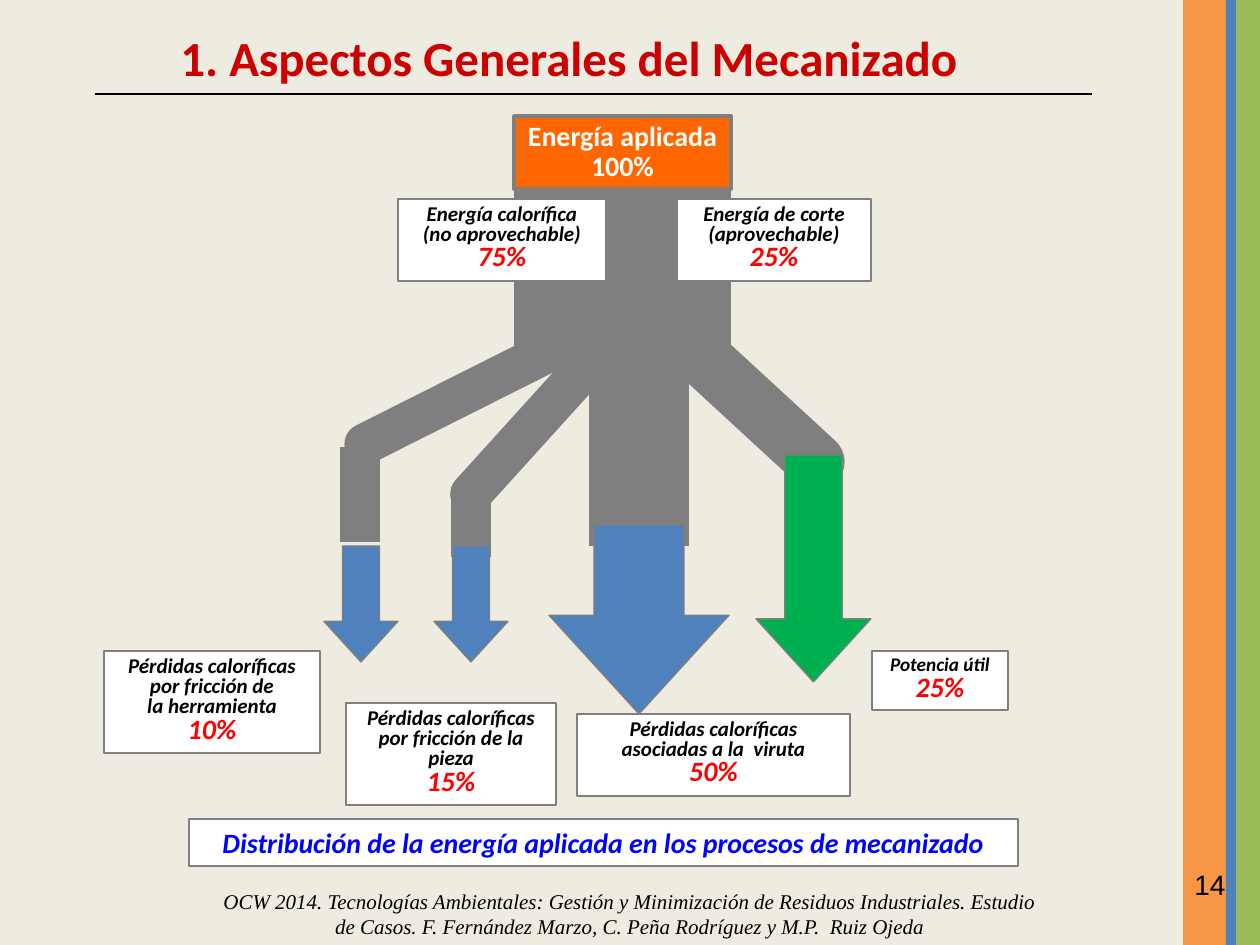
"""Build a slide on how applied energy is distributed in machining."""
from lxml.etree import SubElement
from pptx import Presentation
from pptx.dml.color import RGBColor
from pptx.enum.shapes import MSO_CONNECTOR, MSO_SHAPE
from pptx.enum.text import MSO_ANCHOR, MSO_AUTO_SIZE, PP_ALIGN
from pptx.oxml.ns import qn
from pptx.util import Pt

SCALE = 914400 / 126
WIDTH, HEIGHT = 1260, 945

BLACK = RGBColor(0x00, 0x00, 0x00)
WHITE = RGBColor(0xFF, 0xFF, 0xFF)
CREAM = RGBColor(0xEE, 0xEC, 0xE1)
GRAY = RGBColor(0x7F, 0x7F, 0x7F)
BLUE = RGBColor(0x4F, 0x81, 0xBD)
GREEN = RGBColor(0x00, 0xB0, 0x50)
LIME = RGBColor(0x9B, 0xBB, 0x59)
AMBER = RGBColor(0xF7, 0x96, 0x46)
ORANGE = RGBColor(0xFF, 0x66, 0x00)
RED = RGBColor(0xFF, 0x00, 0x00)
DARK_RED = RGBColor(0xCC, 0x00, 0x00)
CAPTION_BLUE = RGBColor(0x00, 0x00, 0xFF)

SIDE_BARS = [(1183, 44, AMBER), (1236, 24, LIME), (1226, 10, BLUE)]

FLOWS = [
    ((702, 168), (702, 357), 32.75),
    ((544, 354), (365, 444), 23.5),
    ((534, 168), (534, 357), 22.75),
    ((360, 447), (360, 542), 23),
    ((576, 378), (471, 494), 23.75),
    ((576, 168), (576, 378), 26.5),
    ((471, 494), (471, 557), 23),
    ((702, 357), (816, 462), 32.75),
    ((639, 189), (639, 546), 57),
]

ARROWS = [
    ((756, 455, 115, 227), GREEN),
    ((549, 525, 180, 189), BLUE),
    ((434, 546, 74, 116), BLUE),
    ((324, 546, 74, 116), BLUE),
]

LABELS = [
    ((398, 199, 208, 82), ["Energía calorífica", "(no aprovechable)"], "75%", 12),
    ((677, 199, 194, 82), ["Energía de corte", "(aprovechable)"], "25%", 12),
    ((104, 651, 216, 102), ["Pérdidas caloríficas por fricción de", "la herramienta"], "10%", 12),
    ((872, 651, 136, 59), ["Potencia útil"], "25%", 11),
    ((346, 703, 210, 102), ["Pérdidas caloríficas", "por fricción de la pieza"], "15%", 12),
    ((577, 714, 273, 82), ["Pérdidas caloríficas asociadas a la  viruta"], "50%", 12),
]


def emu(*lengths):
    """Turn px lengths into EMU."""
    return [round(length * SCALE) for length in lengths]


def apply_format(target, values):
    """Set each named attribute on the target."""
    for name, value in values.items():
        setattr(target, name, value)


def write(shape, lines, spacing=None, align=PP_ALIGN.CENTER, **frame_format):
    """Fill a shape with one paragraph for each (text, font format) pair."""
    frame = shape.text_frame
    apply_format(frame, {"word_wrap": True, "vertical_anchor": MSO_ANCHOR.TOP, **frame_format})
    for index, (text, font_format) in enumerate(lines):
        paragraph = frame.add_paragraph() if index else frame.paragraphs[0]
        apply_format(paragraph, {"alignment": align, "line_spacing": spacing})
        run = paragraph.add_run()
        run.text = text
        values = {"name": "Calibri", **font_format}
        run.font.color.rgb = values.pop("color")
        apply_format(run.font, values)


def add_block(shapes, box, fill, line_width=None, kind=MSO_SHAPE.RECTANGLE):
    """Add a filled preset shape, outlined in gray when a width is given."""
    shape = shapes.add_shape(kind, *emu(*box))
    shape.shadow.inherit = False
    shape.fill.solid()
    shape.fill.fore_color.rgb = fill
    if line_width is None:
        shape.line.fill.background()
    else:
        shape.line.color.rgb = GRAY
        shape.line.width = Pt(line_width)
    return shape


def add_arrow(shapes, box, fill):
    """Add a block arrow that points down."""
    arrow = add_block(shapes, box, fill, 0, MSO_SHAPE.DOWN_ARROW)
    arrow.adjustments[0] = 0.5
    arrow.adjustments[1] = 0.548


def add_line(shapes, start, end, color, width):
    """Add a straight line, with round ends when it is slanted."""
    line = shapes.add_connector(MSO_CONNECTOR.STRAIGHT, *emu(*start, *end))
    line.line.color.rgb = color
    line.line.width = Pt(width)
    if start[0] != end[0] and start[1] != end[1]:
        line.line._get_or_add_ln().set("cap", "rnd")
    SubElement(line._element.spPr, qn("a:effectLst"))


def add_label(shapes, box, texts, share, size):
    """Add a white box with a description and its share in red."""
    style = {"bold": True, "italic": True}
    lines = [(text, {**style, "size": Pt(size), "color": BLACK}) for text in texts]
    lines.append((share, {**style, "size": Pt(16), "color": RED}))
    write(add_block(shapes, box, WHITE, 0.75), lines, 0.8,
          auto_size=MSO_AUTO_SIZE.SHAPE_TO_FIT_TEXT)


def add_text(shapes, box, text, font_format, **text_format):
    """Add a text box with one paragraph."""
    write(shapes.add_textbox(*emu(*box)), [(text, font_format)], **text_format)


def add_diagram(slide):
    """Add the grouped energy flow diagram."""
    shapes = slide.shapes.add_group_shape().shapes
    for start, end, width in FLOWS:
        add_line(shapes, start, end, GRAY, width)
    for box, fill in ARROWS:
        add_arrow(shapes, box, fill)
    source = add_block(shapes, (514, 116, 217, 73), ORANGE, 2)
    write(source, [("Energía aplicada 100%", {"size": Pt(16), "bold": True, "color": WHITE})],
          0.9, vertical_anchor=MSO_ANCHOR.MIDDLE)
    for label in LABELS:
        add_label(shapes, *label)


def main():
    """Build and save the presentation."""
    presentation = Presentation()
    presentation.slide_width, presentation.slide_height = emu(WIDTH, HEIGHT)
    slide = presentation.slides.add_slide(presentation.slide_layouts[6])
    slide.background.fill.solid()
    slide.background.fill.fore_color.rgb = CREAM
    shapes = slide.shapes

    for left, width, fill in SIDE_BARS:
        add_block(shapes, (left, 0, width, HEIGHT), fill)
    add_line(shapes, (95, 94), (1092, 94), BLACK, 0.75)
    add_text(shapes, (1182, 861, 78, 66), "14",
             {"name": "Arial", "size": Pt(16), "color": BLACK}, align=PP_ALIGN.LEFT)
    add_text(shapes, (210, 882, 840, 63),
             "OCW 2014. Tecnologías Ambientales: Gestión y Minimización de Residuos Industriales. "
             "Estudio de Casos. F. Fernández Marzo, C. Peña Rodríguez y M.P.  Ruiz Ojeda",
             {"name": "Times New Roman", "size": Pt(12), "italic": True, "color": BLACK},
             vertical_anchor=MSO_ANCHOR.MIDDLE)
    add_diagram(slide)
    caption = add_block(shapes, (189, 819, 829, 47), WHITE, 0.75)
    write(caption, [("Distribución de la energía aplicada en los procesos de mecanizado",
                     {"size": Pt(16), "bold": True, "italic": True, "color": CAPTION_BLUE})],
          auto_size=MSO_AUTO_SIZE.SHAPE_TO_FIT_TEXT)
    add_text(shapes, (168, 21, 882, 72), "1. Aspectos Generales del Mecanizado",
             {"size": Pt(28), "bold": True, "color": DARK_RED}, align=PP_ALIGN.LEFT)
    presentation.save("out.pptx")


if __name__ == "__main__":
    main()
